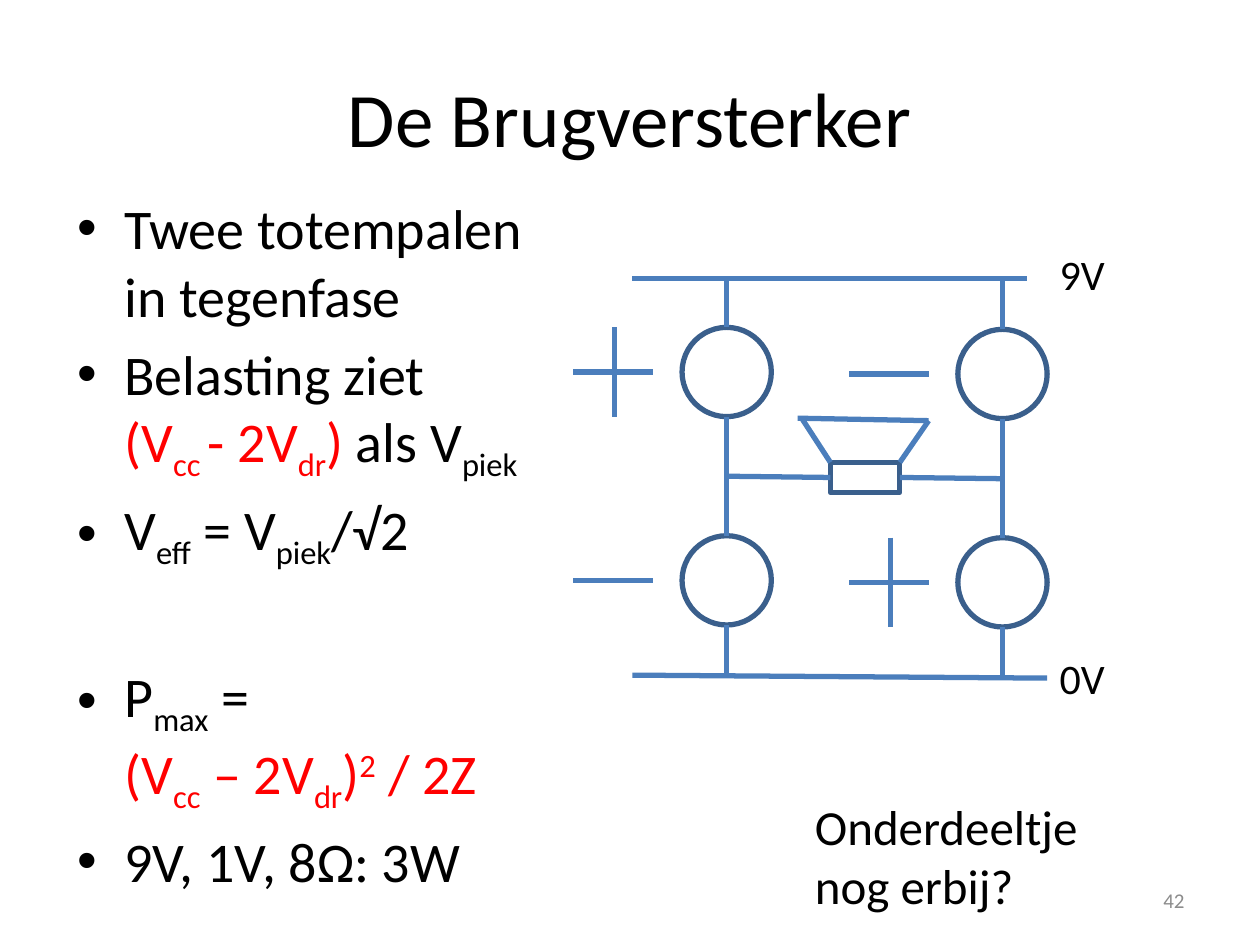
from typing import NamedTuple

from pptx import Presentation
from pptx.dml.color import RGBColor
from pptx.enum.shapes import MSO_CONNECTOR, MSO_SHAPE
from pptx.enum.text import MSO_ANCHOR as Anchor, MSO_AUTO_SIZE as AutoSize, PP_ALIGN as Align
from pptx.oxml.ns import qn
from pptx.util import Cm, Pt

BLACK = RGBColor(0x00, 0x00, 0x00)
RED = RGBColor(0xFF, 0x00, 0x00)
GREY = RGBColor(0x8C, 0x8C, 0x8C)
WIRE = RGBColor(0x4B, 0x7E, 0xBC)
OUTLINE = RGBColor(0x3A, 0x5F, 0x8C)
FONT = "Calibri"
SUB, SUPER = -25000, 30000

# Circuit measures in cm
DIAMETER = 1.8
RAIL_TOP, RAIL_BOTTOM = 5.62, 13.61
SIGN_FAR, SIGN_MID, SIGN_NEAR = 3.09, 2.26, 1.49  # left of the column axis


class Run(NamedTuple):
    text: str
    color: RGBColor = BLACK
    baseline: int = 0


class Bullet(NamedTuple):
    runs: list[Run]
    before: float = 6.4


class Totem(NamedTuple):
    x: float
    drop: float  # how far the column sits below the left one
    upper_plus: bool


class Label(NamedTuple):
    text: str
    left: float
    top: float
    width: float
    height: float
    size: int = 24


BULLETS = [
    Bullet([Run("Twee totempalen in tegenfase")]),
    Bullet([Run("Belasting ziet \n"), Run("(V", RED), Run("cc ", RED, SUB), Run("- 2V", RED),
            Run("dr", RED, SUB), Run(") ", RED), Run("als V"), Run("piek", BLACK, SUB)]),
    Bullet([Run("V"), Run("eff", BLACK, SUB), Run(" = V"), Run("piek", BLACK, SUB), Run("/√2")]),
    Bullet([Run("P"), Run("max", BLACK, SUB), Run(" = \n"), Run("(V", RED), Run("cc", RED, SUB),
            Run(" – 2V", RED), Run("dr", RED, SUB), Run(")", RED), Run("2", RED, SUPER),
            Run(" / 2Z", RED)], before=52),
    Bullet([Run("9V, 1V, 8Ω: 3W")]),
]
TOTEMS = [Totem(14.65, 0, True), Totem(20.21, 0.04, False)]
LABELS = [
    Label("0V", 21.11, 13.03, 2, 1.27),
    Label("9V", 21.11, 4.88, 2, 1.27),
    Label("Onderdeeltje nog erbij?", 16.18, 15.93, 6, 2.64, 28),
]


def write(p, text: str, *, size: float, color: RGBColor = BLACK, baseline: int = 0) -> None:
    for i, line in enumerate(text.split("\n")):
        if i:
            p.add_line_break()
        if not line:
            continue
        r = p.add_run()
        r.text = line
        r.font.size, r.font.name = Pt(size), FONT
        r.font.color.rgb = color
        if baseline:
            r.font._element.set("baseline", str(baseline))


def place(sp, left: float, top: float, width: float, height: float) -> None:
    sp.left, sp.top, sp.width, sp.height = Cm(left), Cm(top), Cm(width), Cm(height)


def add_wire(slide, x1: float, y1: float, x2: float, y2: float):
    wire = slide.shapes.add_connector(MSO_CONNECTOR.STRAIGHT, Cm(x1), Cm(y1), Cm(x2), Cm(y2))
    wire.line.color.rgb, wire.line.width = WIRE, Pt(3)
    sp_pr = wire._element.spPr
    sp_pr.append(sp_pr.makeelement(qn("a:effectLst"), {}))
    return wire


def add_outline(slide, kind: MSO_SHAPE, left: float, top: float, width: float, height: float):
    sp = slide.shapes.add_shape(kind, Cm(left), Cm(top), Cm(width), Cm(height))
    sp.shadow.inherit = False
    sp.fill.background()
    sp.line.color.rgb, sp.line.width = OUTLINE, Pt(3)
    return sp


def add_box(slide, label: Label, color: RGBColor = BLACK):
    tf = slide.shapes.add_textbox(*map(Cm, label[1:5])).text_frame
    tf.word_wrap = True
    write(tf.paragraphs[0], label.text, size=label.size, color=color)
    return tf


def add_totem(slide, totem: Totem) -> None:
    x, drop, upper_plus = totem
    tops = [6.6 + drop, 10.8 + drop]
    for top, plus in zip(tops, (upper_plus, not upper_plus)):
        middle = top + DIAMETER / 2
        add_outline(slide, MSO_SHAPE.OVAL, x - DIAMETER / 2, top, DIAMETER, DIAMETER)
        add_wire(slide, x - SIGN_NEAR, middle, x - SIGN_FAR, middle)
        if plus:
            add_wire(slide, x - SIGN_MID, top, x - SIGN_MID, top + DIAMETER)
    ends = [RAIL_TOP, tops[0], tops[0] + DIAMETER, tops[1], tops[1] + DIAMETER, RAIL_BOTTOM + drop]
    for start, end in zip(ends[::2], ends[1::2]):
        add_wire(slide, x, start, x, end)


def add_speaker(slide) -> None:
    coil = add_outline(slide, MSO_SHAPE.RECTANGLE, 16.74, 9.32, 1.4, 0.61)
    left, right = TOTEMS
    add_wire(slide, left.x, 9.6, 16.74, 9.62).end_connect(coil, 1)
    add_wire(slide, 18.14, 9.62, right.x, 9.65).begin_connect(coil, 3)
    add_wire(slide, 16.18, 8.46, 16.74, 9.32)
    add_wire(slide, 16.08, 8.43, 18.72, 8.48)
    add_wire(slide, 18.72, 8.48, 18.14, 9.32)


def main() -> None:
    prs = Presentation()
    prs.slide_width, prs.slide_height = Cm(25.4), Cm(19.05)
    slide = prs.slides.add_slide(prs.slide_layouts[1])

    # Title
    title, body = slide.shapes.title, slide.placeholders[1]
    place(title, 1.27, 0.76, 22.86, 3.18)
    write(title.text_frame.paragraphs[0], "De Brugversterker", size=44)

    # Bullet list
    place(body, 1.3, 3.78, 9.63, 14.73)
    tf = body.text_frame
    tf.auto_size = AutoSize.NONE
    for i, bullet in enumerate(BULLETS):
        p = tf.add_paragraph() if i else tf.paragraphs[0]
        p.space_before = Pt(bullet.before)
        for run in bullet.runs:
            write(p, run.text, size=32, color=run.color, baseline=run.baseline)

    # Circuit
    add_wire(slide, 12.75, RAIL_TOP, 20.7, RAIL_TOP)
    add_wire(slide, 12.75, RAIL_BOTTOM, 21.11, 13.67)
    for totem in TOTEMS:
        add_totem(slide, totem)
    add_speaker(slide)

    # Labels and slide number
    for label in LABELS:
        add_box(slide, label).auto_size = AutoSize.SHAPE_TO_FIT_TEXT
    number = add_box(slide, Label("42", 18.2, 17.65, 5.93, 1.01, 12), GREY)
    number.vertical_anchor = Anchor.MIDDLE
    number.paragraphs[0].alignment = Align.RIGHT

    prs.save("out.pptx")


if __name__ == "__main__":
    main()
